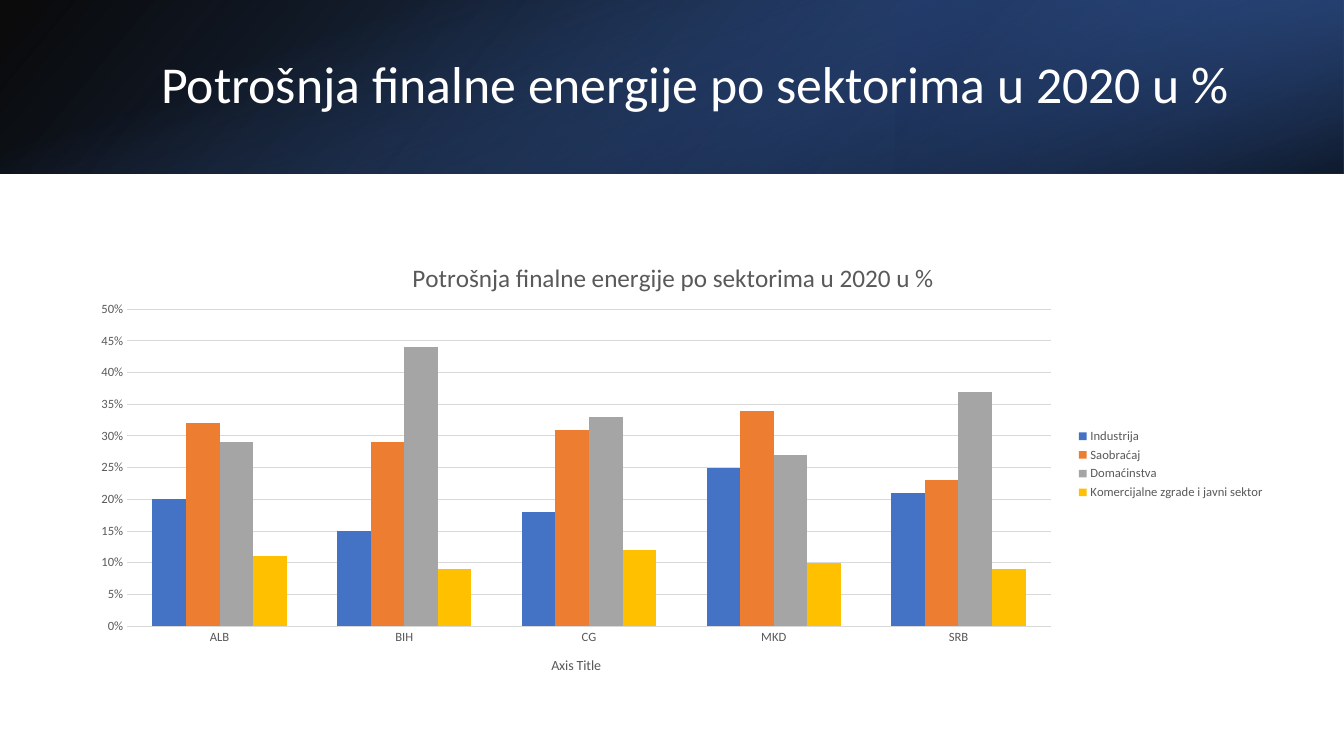
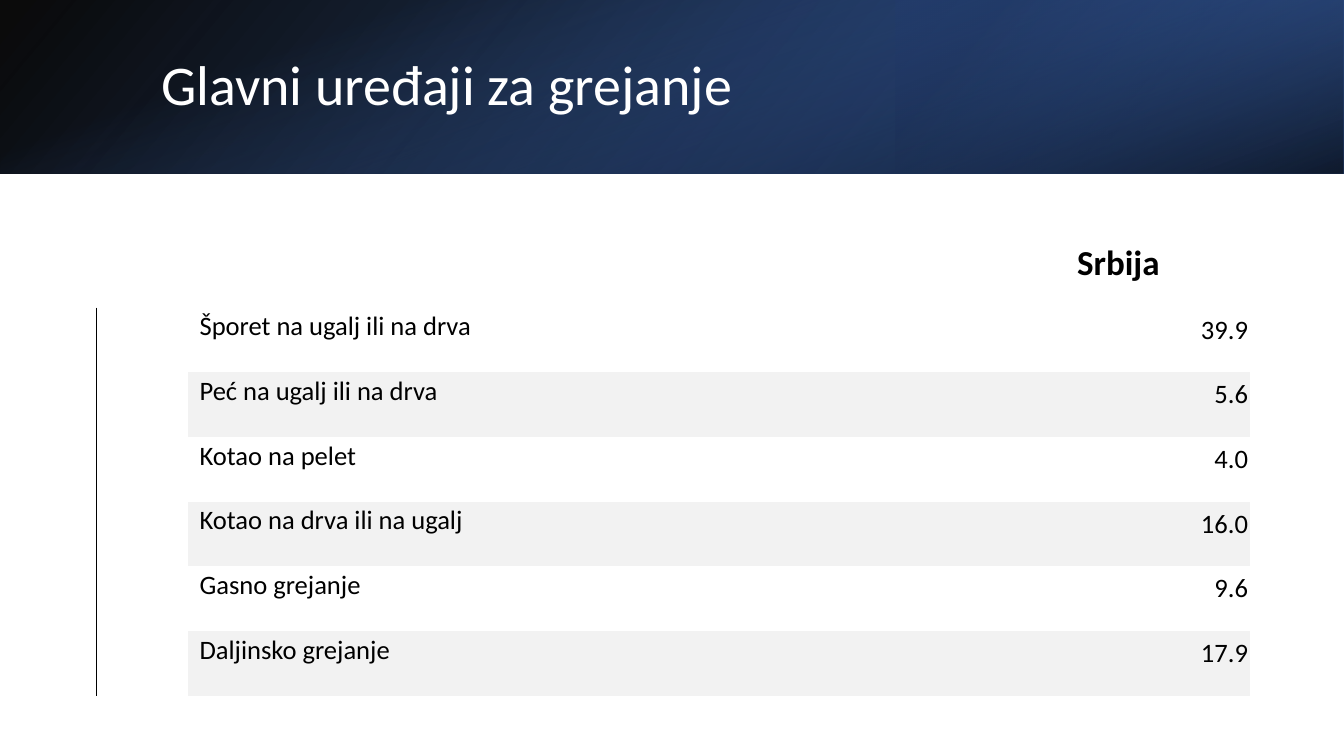
from dataclasses import dataclass

from lxml import etree
from pptx import Presentation
from pptx import util as u
from pptx.chart.data import CategoryChartData
from pptx.dml.color import RGBColor
from pptx.enum import chart as charts, shapes, text
from pptx.oxml import parse_xml
from pptx.oxml.ns import nsdecls, qn


@dataclass(frozen=True)
class Theme:
    font: str = "Calibri"
    white: str = "FFFFFF"
    black: str = "000000"
    grey_text: str = "595959"
    rule: str = "D9D9D9"
    stripe: str = "F2F2F2"
    navy: str = "203864"
    steel: str = "2F5597"
    blue: str = "4472C4"
    series: tuple = ("4472C4", "ED7D31", "A5A5A5", "FFC000")
    title_size: float = 40
    long_title_size: float = 37
    header_size: float = 25
    body_size: float = 19
    chart_title_size: float = 18
    axis_title_size: float = 10
    chart_size: float = 9
    hairline: float = 0.75


THEME = Theme()
WIDTH, HEIGHT, BAND = 33.87, 19.05, 4.37
CONTENT_TOP = 5.87
NO_GRID_STYLE = "{2D5ABB26-0587-4C30-8999-92F81FD0307C}"

SECTOR_TITLE = "Potrošnja finalne energije po sektorima u 2020 u %"
COUNTRIES = ("ALB", "BIH", "CG", "MKD", "SRB")
SECTORS = {
    "Industrija": (0.2, 0.15, 0.18, 0.25, 0.21),
    "Saobraćaj": (0.32, 0.29, 0.31, 0.34, 0.23),
    "Domaćinstva": (0.29, 0.44, 0.33, 0.27, 0.37),
    "Komercijalne zgrade i javni sektor": (0.11, 0.09, 0.12, 0.1, 0.09),
}
HEATING = (
    ("Šporet na ugalj ili na drva", "39.9"),
    ("Peć na ugalj ili na drva", "5.6"),
    ("Kotao na pelet", "4.0"),
    ("Kotao na drva ili na ugalj", "16.0"),
    ("Gasno grejanje", "9.6"),
    ("Daljinsko grejanje", "17.9"),
)


def rgb(color):
    return RGBColor.from_string(color)


def style_font(font, size, color, bold=False):
    font.name = THEME.font
    font.size = u.Pt(size)
    font.bold = bold
    font.color.rgb = rgb(color)


def add_run(paragraph, content, size, color, bold=False):
    run = paragraph.add_run()
    run.text = content
    style_font(run.font, size, color, bold)


def add_gradient_band(slide, box, stops, angle, rotation=0, flipped=False):
    shape = slide.shapes.add_shape(
        shapes.MSO_SHAPE.RECTANGLE, *(u.Cm(length) for length in box))
    shape.shadow.inherit = False
    shape.line.fill.background()
    shape.rotation = rotation
    properties = shape.element.spPr
    if flipped:
        properties.get_or_add_xfrm().set("flipH", "1")
    stop_xml = "".join(
        f'<a:gs pos="{position * 1000}"><a:srgbClr val="{color}">'
        f'<a:alpha val="{opacity * 1000}"/></a:srgbClr></a:gs>'
        for position, color, opacity in stops)
    gradient = parse_xml(
        f'<a:gradFill {nsdecls("a")} rotWithShape="1"><a:gsLst>{stop_xml}</a:gsLst>'
        f'<a:lin ang="{angle * 60000}" scaled="0"/></a:gradFill>')
    properties.find(qn("a:prstGeom")).addnext(gradient)


def add_header(slide):
    add_gradient_band(
        slide, (0, 0, WIDTH, BAND),
        ((0, THEME.black, 96), (100, THEME.steel, 100)), 140, flipped=True)
    add_gradient_band(
        slide, (WIDTH * 2 / 3, 0, WIDTH / 3, BAND),
        ((19, THEME.navy, 68), (100, THEME.blue, 79)), 320, 180, True)
    offset = (WIDTH - BAND) / 2
    add_gradient_band(
        slide, (offset, -offset, BAND, WIDTH),
        ((23, THEME.blue, 0), (99, THEME.black, 74)), 340, 90)


def add_titled_slide(presentation, content, size):
    slide = presentation.slides.add_slide(presentation.slide_layouts[5])
    add_header(slide)
    title = slide.shapes.title
    title.element.getparent().append(title.element)
    title.left, title.top = u.Cm(3.81), u.Cm(0.97)
    title.width, title.height = u.Cm(27.89), u.Cm(2.44)
    frame = title.text_frame
    frame.word_wrap = True
    frame.auto_size = text.MSO_AUTO_SIZE.NONE
    frame.vertical_anchor = text.MSO_ANCHOR.MIDDLE
    paragraph = frame.paragraphs[0]
    paragraph.alignment = text.PP_ALIGN.LEFT
    paragraph.line_spacing = 0.9
    add_run(paragraph, content, size, THEME.white)
    return slide


def set_layout(parent, index, **places):
    for layout in parent.findall(qn("c:layout")):
        parent.remove(layout)
    layout = parse_xml(f'<c:layout {nsdecls("c")}/>')
    manual = etree.SubElement(layout, qn("c:manualLayout"))
    for name, value in places.items():
        etree.SubElement(manual, qn(f"c:{name}")).set("val", str(value))
    parent.insert(index, layout)


def style_line(line, color):
    line.color.rgb = rgb(color)
    line.width = u.Pt(THEME.hairline)


def style_axes(chart):
    category_axis, value_axis = chart.category_axis, chart.value_axis
    for axis in (category_axis, value_axis):
        axis.major_tick_mark = charts.XL_TICK_MARK.NONE
        style_font(axis.tick_labels.font, THEME.chart_size, THEME.grey_text)
    style_line(category_axis.format.line, THEME.rule)
    add_run(category_axis.axis_title.text_frame.paragraphs[0], "Axis Title",
            THEME.axis_title_size, THEME.grey_text)
    value_axis.minimum_scale = 0
    value_axis.maximum_scale = 0.5
    value_axis.major_unit = 0.05
    value_axis.tick_labels.number_format = "0%"
    value_axis.tick_labels.number_format_is_linked = False
    value_axis.format.line.fill.background()
    style_line(value_axis.major_gridlines.format.line, THEME.rule)


def add_sector_chart(slide):
    data = CategoryChartData(number_format="0%")
    data.categories = COUNTRIES
    for name, values in SECTORS.items():
        data.add_series(name, values)
    chart = slide.shapes.add_chart(
        charts.XL_CHART_TYPE.COLUMN_CLUSTERED, u.Cm(1.78), u.Cm(CONTENT_TOP),
        u.Cm(30.35), u.Cm(11.66), data).chart
    style_font(chart.font, THEME.axis_title_size, THEME.black)
    add_run(chart.chart_title.text_frame.paragraphs[0], SECTOR_TITLE,
            THEME.chart_title_size, THEME.grey_text)
    chart.chart_title.include_in_layout = False
    set_layout(chart.chart_title.element, 1, xMode="edge", yMode="edge", x=0.28, y=0.05)
    set_layout(chart.element.chart.plotArea, 0, layoutTarget="inner",
               xMode="edge", yMode="edge", x=0.047, y=0.165, w=0.767, h=0.685)
    chart.has_legend = True
    chart.legend.position = charts.XL_LEGEND_POSITION.RIGHT
    chart.legend.include_in_layout = False
    style_font(chart.legend.font, THEME.chart_size, THEME.grey_text)
    plot = chart.plots[0]
    plot.gap_width = 150
    plot.vary_by_categories = False
    for series, color in zip(plot.series, THEME.series):
        series.format.fill.solid()
        series.format.fill.fore_color.rgb = rgb(color)
    style_axes(chart)


def fill_cell(cell, content, size, alignment, anchor, bold=False):
    cell.margin_left, cell.margin_top = u.Cm(0.28), u.Cm(0.08)
    cell.margin_right, cell.margin_bottom = u.Cm(0.05), u.Cm(0.58)
    cell.vertical_anchor = anchor
    paragraph = cell.text_frame.paragraphs[0]
    paragraph.alignment = alignment
    add_run(paragraph, content, size, THEME.black, bold)


def add_left_border(cell):
    border = parse_xml(
        f'<a:lnL {nsdecls("a")} w="{u.Pt(THEME.hairline)}"><a:solidFill>'
        f'<a:srgbClr val="{THEME.black}"/></a:solidFill></a:lnL>')
    cell._tc.get_or_add_tcPr().insert(0, border)


def add_heating_table(slide):
    widths = (2.31, 19.89, 6.86)
    heights = (1.88,) + (1.63,) * len(HEATING)
    frame = slide.shapes.add_table(
        len(heights), len(widths), u.Cm(2.44), u.Cm(CONTENT_TOP),
        u.Cm(sum(widths)), u.Cm(sum(heights)))
    table = frame.table
    table.first_row = table.horz_banding = False
    next(frame.element.iter(qn("a:tableStyleId"))).text = NO_GRID_STYLE
    for column, width in zip(table.columns, widths):
        column.width = u.Cm(width)
    for row, height in zip(table.rows, heights):
        row.height = u.Cm(height)
    for cell in table.iter_cells():
        cell.fill.background()

    table.cell(0, 0).merge(table.cell(0, 1))
    side = table.cell(1, 0)
    side.merge(table.cell(len(HEATING), 0))
    add_left_border(side)
    fill_cell(table.cell(0, 2), "Srbija", THEME.header_size,
              text.PP_ALIGN.CENTER, text.MSO_ANCHOR.BOTTOM, True)
    for index, (device, share) in enumerate(HEATING, 1):
        label, value = table.cell(index, 1), table.cell(index, 2)
        fill_cell(label, device, THEME.body_size,
                  text.PP_ALIGN.LEFT, text.MSO_ANCHOR.TOP)
        fill_cell(value, share, THEME.body_size,
                  text.PP_ALIGN.RIGHT, text.MSO_ANCHOR.MIDDLE)
        if index % 2 == 0:
            for cell in (label, value):
                cell.fill.solid()
                cell.fill.fore_color.rgb = rgb(THEME.stripe)


def main():
    presentation = Presentation()
    presentation.slide_width, presentation.slide_height = u.Cm(WIDTH), u.Cm(HEIGHT)
    add_sector_chart(add_titled_slide(presentation, SECTOR_TITLE, THEME.long_title_size))
    add_heating_table(
        add_titled_slide(presentation, "Glavni uređaji za grejanje", THEME.title_size))
    presentation.save("out.pptx")


if __name__ == "__main__":
    main()
